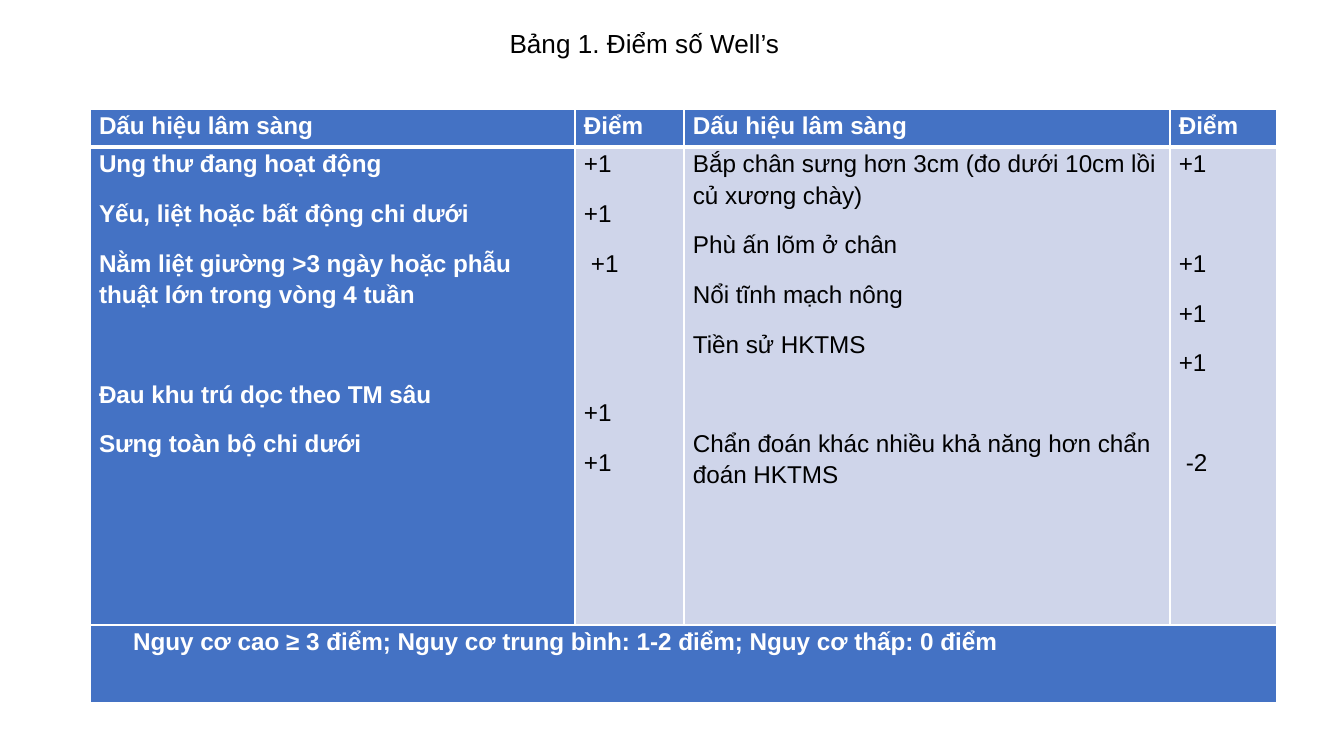
from lxml.etree import SubElement
from pptx import Presentation
from pptx.dml.color import RGBColor
from pptx.enum.text import MSO_ANCHOR as ANCHOR, MSO_AUTO_SIZE as AUTOSIZE, PP_ALIGN as ALIGN
from pptx.oxml.ns import qn
from pptx.util import Emu, Pt


class Theme:
    font = "Arial"
    title_size, body_size = Pt(14), Pt(13)
    black, white = RGBColor(0, 0, 0), RGBColor(255, 255, 255)
    blue, pale = RGBColor(0x44, 0x72, 0xC4), RGBColor(0xCF, 0xD5, 0xEA)
    thin, thick = Pt(1), Pt(3)
    line_spacing, after = 1.15, Pt(10)
    row_pitch = 26.6  # points taken by one line of a list and its gap


def px(n):
    return Emu(round(n * 914400 / 134.4))


def fill_cell(cell, items, accent, bottom):
    """Write (text, skipped lines, left px, first-line px) items into a styled cell."""
    tc_pr = cell._tc.get_or_add_tcPr()
    for side in ("L", "R", "T", "B"):
        width = bottom if side == "B" else Theme.thin
        ln = SubElement(tc_pr, qn(f"a:ln{side}"), w=str(width))
        SubElement(SubElement(ln, qn("a:solidFill")), qn("a:srgbClr"), val=str(Theme.white))
    cell.fill.solid()
    cell.fill.fore_color.rgb = Theme.blue if accent else Theme.pale
    margins = dict(margin_left=px(9), margin_right=px(9), margin_top=0, margin_bottom=0)
    for name, value in margins.items():
        setattr(cell, name, value)
    tf = cell.text_frame
    for i, (text, skipped, left, first) in enumerate(items):
        p = tf.paragraphs[0] if i == 0 else tf.add_paragraph()
        p.line_spacing, p.space_after = Theme.line_spacing, Theme.after
        if skipped:
            p.space_before = Pt(skipped * Theme.row_pitch)
        p_pr = p._p.get_or_add_pPr()
        p_pr.set("marL", str(px(left)))
        p_pr.set("indent", str(px(first)))
        r = p.add_run()
        r.text = text
        for name, value in dict(name=Theme.font, size=Theme.body_size, bold=accent).items():
            setattr(r.font, name, value)
        r.font.color.rgb = Theme.white if accent else Theme.black


prs = Presentation()
prs.slide_width, prs.slide_height = px(1344), px(756)
s = prs.slides.add_slide(prs.slide_layouts[5])

# Title
title = s.shapes.title
title.left, title.top, title.width, title.height = px(90), px(20), px(1042), px(46)
tf = title.text_frame
for name, value in dict(word_wrap=True, auto_size=AUTOSIZE.NONE, vertical_anchor=ANCHOR.MIDDLE).items():
    setattr(tf, name, value)
p = tf.paragraphs[0]
p.alignment = ALIGN.CENTER
p._p.get_or_add_pPr().set("indent", str(px(67)))
r = p.add_run()
r.text = "Bảng 1. Điểm số Well’s"
r.font.name, r.font.size = Theme.font, Theme.title_size
r.font.color.rgb = Theme.black

# Score table
col_widths = [485, 109, 486, 107]
row_heights = [38, 478, 78]
headers = ["Dấu hiệu lâm sàng", "Điểm"] * 2
columns = [
    [("Ung thư đang hoạt động", 0, 0, 0),
     ("Yếu, liệt hoặc bất động chi dưới", 0, 0, 0),
     ("Nằm liệt giường >3 ngày hoặc phẫu thuật lớn trong vòng 4 tuần", 0, 0, 0),
     ("Đau khu trú dọc theo TM sâu", 1, 0, 0),
     ("Sưng toàn bộ chi dưới", 0, 0, 0)],
    [("+1", 0, 0, 0), ("+1", 0, 0, 0), ("+1", 0, 7, 0), ("+1", 2, 0, 0), ("+1", 0, 0, 0)],
    [("Bắp chân sưng hơn 3cm (đo dưới 10cm lồi củ xương chày)", 0, 0, 0),
     ("Phù ấn lõm ở chân", 0, 0, 0),
     ("Nổi tĩnh mạch nông", 0, 0, 0),
     ("Tiền sử HKTMS", 0, 0, 0),
     ("Chẩn đoán khác nhiều khả năng hơn chẩn đoán HKTMS", 1, 0, 0)],
    [("+1", 0, 0, 0), ("+1", 1, 0, 0), ("+1", 0, 0, 0), ("+1", 0, 0, 0), ("-2", 1, 7, 0)],
]
risk = "Nguy cơ cao ≥ 3 điểm; Nguy cơ trung bình: 1-2 điểm; Nguy cơ thấp: 0 điểm"

table = s.shapes.add_table(
    3, 4, px(90), px(109), px(sum(col_widths)), px(sum(row_heights))).table
table.horz_banding = False
for col, width in zip(table.columns, col_widths):
    col.width = px(width)
for row, height in zip(table.rows, row_heights):
    row.height = px(height)

for c, (header, items) in enumerate(zip(headers, columns)):
    fill_cell(table.cell(0, c), [(header, 0, 0, 0)], True, Theme.thick)
    fill_cell(table.cell(1, c), items, c == 0, Theme.thin)
table.cell(2, 0).merge(table.cell(2, 3))
fill_cell(table.cell(2, 0), [(risk, 0, 0, 34)], True, Theme.thin)

prs.save("out.pptx")
